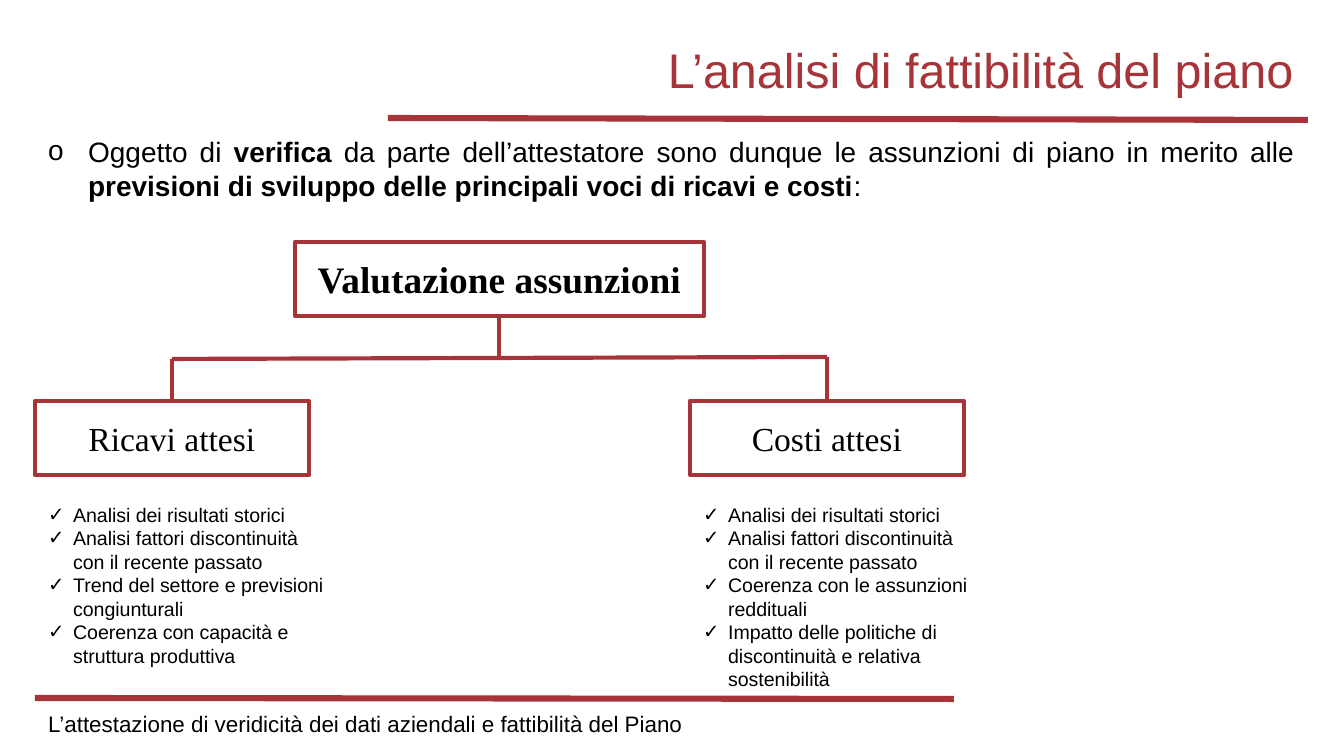
from lxml import etree
from pptx import Presentation
from pptx.dml.color import RGBColor
from pptx.enum.shapes import MSO_CONNECTOR, MSO_SHAPE
from pptx.enum.text import MSO_ANCHOR, PP_ALIGN
from pptx.oxml.ns import qn
from pptx.util import Emu, Pt

STRAIGHT, RECT = MSO_CONNECTOR.STRAIGHT, MSO_SHAPE.RECTANGLE
TOP, MIDDLE = MSO_ANCHOR.TOP, MSO_ANCHOR.MIDDLE
LEFT, MID, RIGHT, JUST = PP_ALIGN.LEFT, PP_ALIGN.CENTER, PP_ALIGN.RIGHT, PP_ALIGN.JUSTIFY

SCALE = 914400 / 134.4
COLORS = {"red": "A73439", "black": "000000", "white": "FFFFFF"}

# A paragraph is a list of (text, bold) runs.
TITLE = [[("L’analisi di fattibilità del piano", False)]]
INTRO = [[
    ("Oggetto di ", False),
    ("verifica", True),
    (" da parte dell’attestatore sono dunque le assunzioni di piano in merito alle ", False),
    ("previsioni di sviluppo delle principali voci di ricavi e costi", True),
    (":", False),
]]
FOOTER = [[("L’attestazione di veridicità dei dati aziendali e fattibilità del Piano", False)]]
ROOT = "Valutazione assunzioni"
COMMON = ["Analisi dei risultati storici",
          "Analisi fattori discontinuità con il recente passato"]
BRANCHES = [
    # name, left, bar height, list height, checks
    ("Ricavi attesi", 35, 359, 180, COMMON + [
        "Trend del settore e previsioni congiunturali",
        "Coerenza con capacità e struttura produttiva"]),
    ("Costi attesi", 690, 357, 203, COMMON + [
        "Coerenza con le assunzioni reddituali",
        "Impatto delle politiche di discontinuità e relativa sostenibilità"]),
]
RULES = [(35, 698, 954, 699), (388, 118, 1308, 120)]
ROOT_BOX = (295, 242, 409, 74)
BOX_TOP, BOX_W, BOX_H = 401, 274, 74
LIST_TOP, LIST_W = 496, 313


def px(n):
    return Emu(round(n * SCALE))


def rgb(name):
    return RGBColor.from_string(COLORS[name])


def set_bullet(para, mark, indent):
    props = para._p.get_or_add_pPr()
    props.set("marL", str(px(indent)))
    props.set("indent", str(-px(indent)))
    etree.SubElement(props, qn("a:buFont")).set("typeface", "Arial")
    etree.SubElement(props, qn("a:buChar")).set("char", mark)


def write(shape, paras, size, font="Arial", color="black", anchor=TOP,
          bullet=None, **layout):
    frame = shape.text_frame
    frame.word_wrap = True
    frame.vertical_anchor = anchor
    for i, runs in enumerate(paras):
        para = frame.paragraphs[0] if i == 0 else frame.add_paragraph()
        for key, value in layout.items():
            setattr(para, key, value)
        if bullet:
            set_bullet(para, *bullet)
        for text, bold in runs:
            run = para.add_run()
            run.text = text
            for key, value in {"name": font, "size": Pt(size), "bold": bold}.items():
                setattr(run.font, key, value)
            run.font.color.rgb = rgb(color)


def add_text(slide, box, paras, size, **style):
    write(slide.shapes.add_textbox(*map(px, box)), paras, size, **style)


def add_line(slide, ends, width=2.25):
    line = slide.shapes.add_connector(STRAIGHT, *map(px, ends))
    line.line.color.rgb = rgb("red")
    line.line.width = Pt(width)
    etree.SubElement(line._element.spPr, qn("a:effectLst"))


def add_box(slide, box, text, size, bold=False):
    shape = slide.shapes.add_shape(RECT, *map(px, box))
    shape.shadow.inherit = False
    shape.fill.solid()
    shape.fill.fore_color.rgb = rgb("white")
    shape.line.color.rgb = rgb("red")
    shape.line.width = Pt(2.25)
    write(shape, [[(text, bold)]], size, font="Times New Roman",
          anchor=MIDDLE, alignment=MID)


def main():
    deck = Presentation()
    deck.slide_width, deck.slide_height = px(1344), px(756)
    slide = deck.slides.add_slide(deck.slide_layouts[6])

    for ends in RULES:
        add_line(slide, ends, 3.25)
    add_text(slide, (35, 128, 1273, 554), INTRO, 15, bullet=("o", 40),
             alignment=JUST, space_before=Pt(7.5))
    add_text(slide, (149, 34, 1159, 77), TITLE, 26, color="red", anchor=MIDDLE,
             alignment=RIGHT, line_spacing=0.9)

    add_box(slide, ROOT_BOX, ROOT, 20, True)
    left, top, width, height = ROOT_BOX
    mid = left + width // 2
    add_line(slide, (mid, top + height, mid, 358))

    joints = []
    for name, left, bar, height, checks in BRANCHES:
        mid = left + BOX_W // 2
        joints += [mid, bar]
        add_box(slide, (left, BOX_TOP, BOX_W, BOX_H), name, 18)
        add_line(slide, (mid, bar, mid, BOX_TOP))
        add_text(slide, (left, LIST_TOP, LIST_W, height),
                 [[(check, False)] for check in checks], 10.5, bullet=("✓", 25))
    add_line(slide, joints)

    add_text(slide, (35, 707, 929, 40), FOOTER, 12, alignment=LEFT,
             line_spacing=0.9, space_before=Pt(7.5))
    deck.save("out.pptx")


if __name__ == "__main__":
    main()
